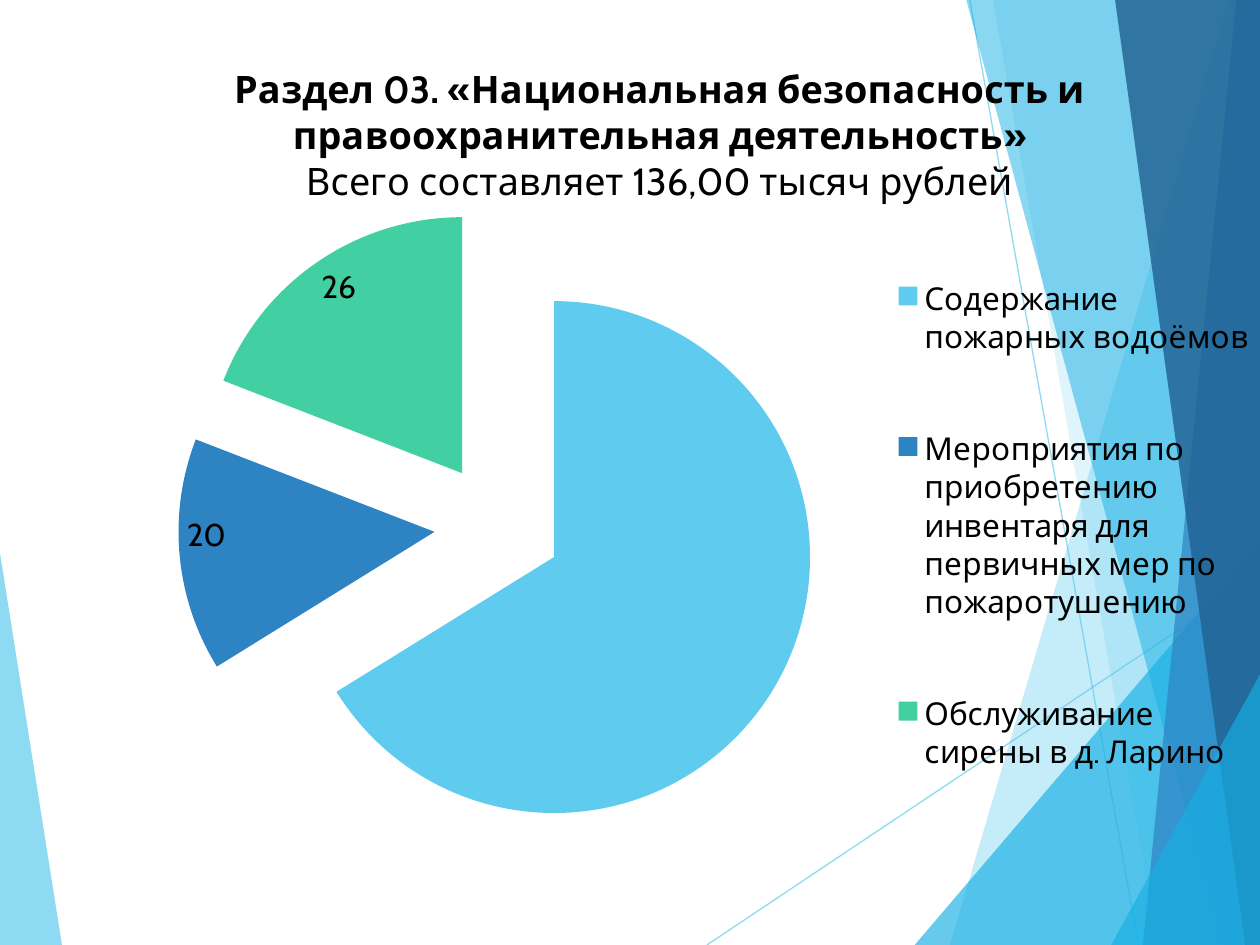
import collections

import lxml.etree
import pptx
import pptx.chart.data
import pptx.dml.color
import pptx.enum.chart
import pptx.enum.shapes
import pptx.oxml
import pptx.oxml.ns
import pptx.util

Cm = pptx.util.Cm
Pt = pptx.util.Pt
RGBColor = pptx.dml.color.RGBColor
qn = pptx.oxml.ns.qn
Box = collections.namedtuple("Box", "left top width height")

SKY = RGBColor(0x5F, 0xCB, 0xEF)
CYAN = RGBColor(0x17, 0xB0, 0xE4)
BLUE = RGBColor(0x2E, 0x83, 0xC3)
NAVY = RGBColor(0x22, 0x62, 0x92)
GREEN = RGBColor(0x42, 0xD0, 0xA2)
BLACK = RGBColor(0, 0, 0)

BODY_FONT = {"name": "Cabin", "size": Pt(18), "bold": False}
TITLE_FONT = {"name": "Cabin", "size": Pt(21.6)}
TITLE = [
    ("Раздел 03. «Национальная безопасность и правоохранительная деятельность»", True),
    ("Всего составляет 136,00 тысяч рублей", False),
]
EXPENSES = [
    ("Содержание пожарных водоёмов", 90, SKY),
    ("Мероприятия по приобретению инвентаря для первичных мер по пожаротушению", 20, BLUE),
    ("Обслуживание сирены в д. Ларино", 26, GREEN),
]


def set_font(font, values):
    for name, value in values.items():
        setattr(font, name, value)
    font.color.rgb = BLACK


def set_opacity(shape, percent):
    for color in shape._element.spPr.iter(qn("a:srgbClr")):
        lxml.etree.SubElement(color, qn("a:alpha")).set("val", str(percent * 1000))


def add_facet(page, box, points, color, opacity):
    corners = [(Cm(box.left + x), Cm(box.top + y)) for x, y in points]
    builder = page.shapes.build_freeform(*corners[0])
    builder.add_line_segments(corners[1:], close=True)
    facet = builder.convert_to_shape()
    facet.shadow.inherit = False
    facet.fill.solid()
    facet.fill.fore_color.rgb = color
    facet.line.fill.background()
    set_opacity(facet, opacity)


def add_ray(page, box, start, end):
    ray = page.shapes.add_connector(
        pptx.enum.shapes.MSO_CONNECTOR.STRAIGHT,
        Cm(box.left + start[0]), Cm(box.top + start[1]),
        Cm(box.left + end[0]), Cm(box.top + end[1]))
    ray.line.color.rgb = SKY
    ray.line.width = Pt(0.75)
    set_opacity(ray, 70)
    lxml.etree.SubElement(ray._element.spPr, qn("a:effectLst"))


def add_backdrop(page, box):
    width, height = box.width, box.height

    def band(top_x, bottom_x):
        return [(top_x, 0), (bottom_x, height), (width, height), (width, 0)]

    def corner(bottom_x, right_y):
        return [(bottom_x, height), (width, right_y), (width, height)]

    # Left wedge and thin rays
    add_facet(page, box, [(0, 11.15), (1.25, height), (0, height)], SKY, 70)
    add_ray(page, box, (14.25, height), (width, 11.6))
    add_ray(page, box, (19.55, 0), (22.95, height))

    # Overlapping facets on the right, back to front
    for points, color, opacity in [
        (band(24.77, 19.15), SKY, 36),
        (band(20.02, 23.34), SKY, 20),
        (corner(18.44, 10.9), CYAN, 66),
        (band(19.48, 24.64), CYAN, 50),
        (band(24.92, 23.04), BLUE, 70),
        (band(22.48, 25.1), NAVY, 82),
        (corner(22.4, 13.6), CYAN, 66),
    ]:
        add_facet(page, box, points, color, opacity)


def set_layout(parent, position, **values):
    """Place a chart part by fractions of the chart area."""
    for old in parent.findall(qn("c:layout")):
        parent.remove(old)
    layout = lxml.etree.Element(qn("c:layout"))
    manual = lxml.etree.SubElement(layout, qn("c:manualLayout"))
    for name, value in values.items():
        lxml.etree.SubElement(manual, qn("c:" + name)).set("val", str(value))
    parent.insert(position, layout)


def add_expense_chart(page, box):
    data = pptx.chart.data.CategoryChartData()
    data.categories = [name for name, _, _ in EXPENSES]
    data.add_series("Series 1", [value for _, value, _ in EXPENSES])
    chart = page.shapes.add_chart(
        pptx.enum.chart.XL_CHART_TYPE.PIE_EXPLODED,
        *(Cm(length) for length in box), data).chart
    set_font(chart.font, BODY_FONT)

    # Title
    frame = chart.chart_title.text_frame
    for index, (text, bold) in enumerate(TITLE):
        para = frame.add_paragraph() if index else frame.paragraphs[0]
        span = para.add_run()
        span.text = text
        set_font(span.font, {**TITLE_FONT, "bold": bold})
    chart.chart_title.include_in_layout = False

    # Slices
    series = chart.plots[0].series[0]
    series._element.find(qn("c:explosion")).set("val", "25")
    for index, (_, _, color) in enumerate(EXPENSES):
        fill = series.points[index].format.fill
        fill.solid()
        fill.fore_color.rgb = color

    # Values, without one on the largest slice
    labels = series.data_labels
    labels.show_value = True
    labels.show_percentage = False
    labels.position = pptx.enum.chart.XL_LABEL_POSITION.INSIDE_END
    set_font(labels.font, BODY_FONT)
    hidden = lxml.etree.Element(qn("c:dLbl"))
    for name, value in (("idx", "0"), ("delete", "1")):
        lxml.etree.SubElement(hidden, qn("c:" + name)).set("val", value)
    labels._element.insert(0, hidden)

    # Legend and plot share one vertical extent
    chart.has_legend = True
    chart.legend.position = pptx.enum.chart.XL_LEGEND_POSITION.RIGHT
    chart.legend.include_in_layout = False
    set_font(chart.legend.font, BODY_FONT)
    edges = {"xMode": "edge", "yMode": "edge"}
    extent = {"y": 0.194, "h": 0.733}
    plot_area = chart._chartSpace.chart.plotArea
    set_layout(plot_area, 0, layoutTarget="inner", **edges,
               x=0.061, y=extent["y"], w=0.609, h=extent["h"])
    set_layout(chart.legend._element, 1, **edges,
               x=0.69, y=extent["y"], w=0.31, h=extent["h"])


def main():
    deck = pptx.Presentation()
    deck.slide_width, deck.slide_height = Cm(25.4), Cm(19.05)
    page = deck.slides.add_slide(deck.slide_layouts[6])
    add_backdrop(page, Box(0, 0, 25.4, 19.05))
    add_expense_chart(page, Box(1.2, 0.74, 24.2, 17.6))
    deck.save("out.pptx")


if __name__ == "__main__":
    main()
